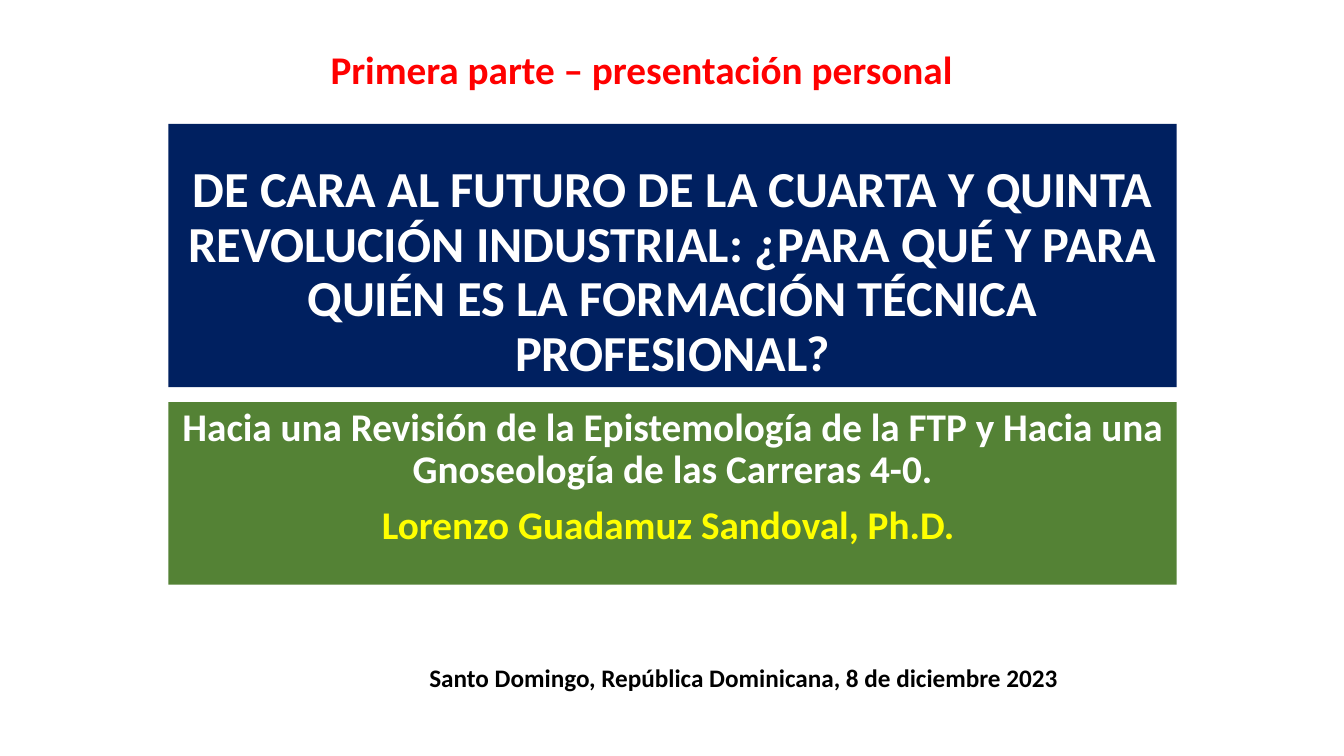
from pptx import Presentation
from pptx import util as u
from pptx.dml.color import RGBColor
from pptx.enum import text

FONT = "Calibri"
WHITE = "FFFFFF"
LEFT, WIDTH = 1.67, 10  # shared by the two colour bands


def color(hex_value):
    return RGBColor.from_string(hex_value)


def place(shape, left, top, width, height):
    box = {"left": left, "top": top, "width": width, "height": height}
    for name, value in box.items():
        setattr(shape, name, u.Inches(value))


def fill_band(shape, hex_value):
    shape.fill.solid()
    shape.fill.fore_color.rgb = color(hex_value)


def write(shape, lines, size, anchor=text.MSO_ANCHOR.TOP, **paragraph_format):
    """Write (words, colour) lines in bold, one paragraph each."""
    frame = shape.text_frame
    frame.word_wrap = True
    frame.auto_size = text.MSO_AUTO_SIZE.NONE
    frame.vertical_anchor = anchor
    for index, (words, hex_value) in enumerate(lines):
        paragraph = frame.paragraphs[0] if index == 0 else frame.add_paragraph()
        for name, value in paragraph_format.items():
            setattr(paragraph, name, value)
        run = paragraph.add_run()
        run.text = words
        for name, value in {"name": FONT, "size": u.Pt(size), "bold": True}.items():
            setattr(run.font, name, value)
        run.font.color.rgb = color(hex_value)


def add_text(slide, left, top, width, height, lines, size, **paragraph_format):
    shape = slide.shapes.add_textbox(*map(u.Inches, (left, top, width, height)))
    write(shape, lines, size, **paragraph_format)
    return shape


def main():
    presentation = Presentation()
    presentation.slide_width = u.Inches(13.33)
    presentation.slide_height = u.Inches(7.5)
    slide = presentation.slides.add_slide(presentation.slide_layouts[5])
    centred = {"alignment": text.PP_ALIGN.CENTER, "line_spacing": 0.9}

    # Title band
    title = slide.shapes.title
    place(title, LEFT, 1.23, WIDTH, 2.61)
    fill_band(title, "002060")
    write(title, [(
        "DE CARA AL FUTURO DE LA CUARTA Y QUINTA REVOLUCIÓN INDUSTRIAL: "
        "¿PARA QUÉ Y PARA QUIÉN ES LA FORMACIÓN TÉCNICA PROFESIONAL?", WHITE)],
        36, text.MSO_ANCHOR.BOTTOM, **centred)

    # Subtitle and author band
    subtitle = add_text(slide, LEFT, 3.99, WIDTH, 1.81, [
        ("Hacia una Revisión de la Epistemología de la FTP y Hacia una "
         "Gnoseología de las Carreras 4-0.", WHITE),
        ("Lorenzo Guadamuz Sandoval, Ph.D. ", "FFFF00"),
    ], 28, space_before=u.Pt(10), **centred)
    fill_band(subtitle, "548235")

    # Place and date
    add_text(slide, 4.16, 6.52, 6.63, 0.4,
             [("Santo Domingo, República Dominicana, 8 de diciembre 2023", "000000")], 18)

    # Part heading
    add_text(slide, 3.18, 0.4, 8.13, 0.57,
             [("Primera parte – presentación personal", "FF0000")], 28)

    presentation.save("out.pptx")


if __name__ == "__main__":
    main()
